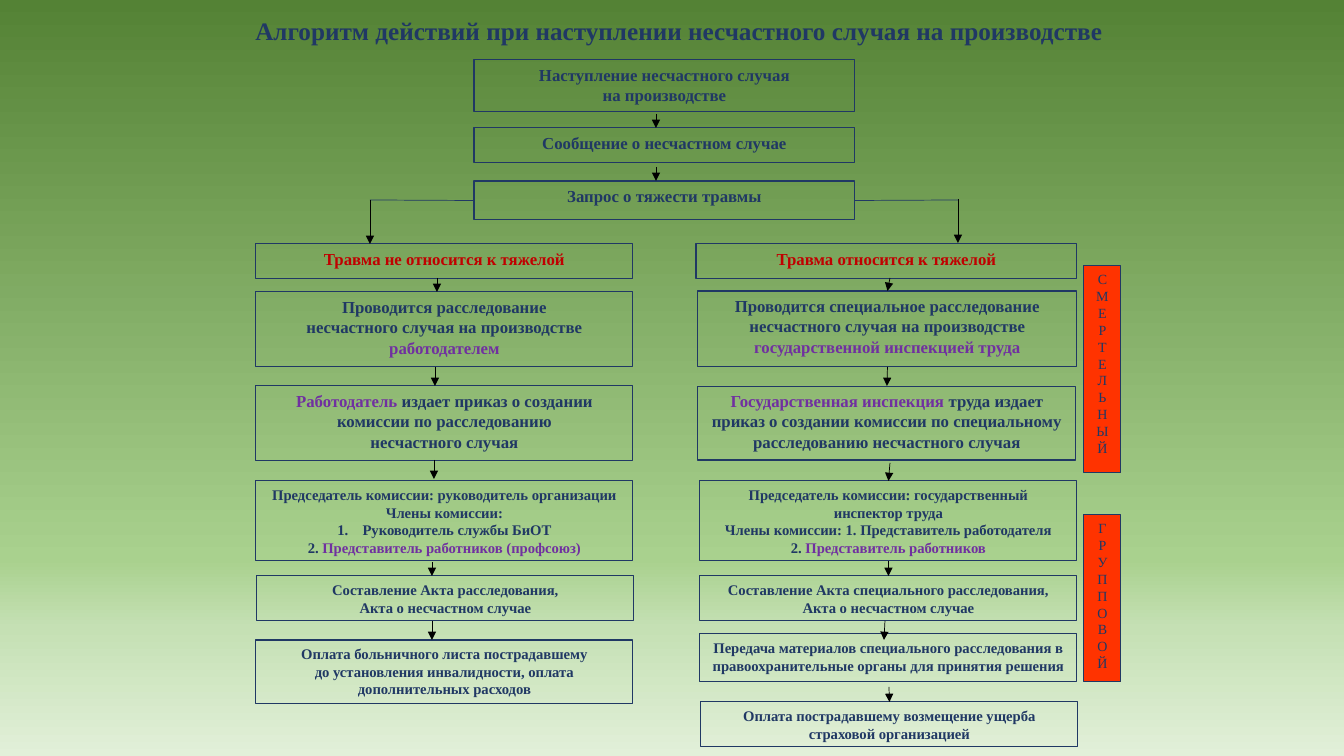
from copy import deepcopy
from lxml import etree
from pptx import Presentation, util as u
from pptx.dml.color import RGBColor
from pptx.enum import shapes, text
from pptx.oxml.ns import qn

PX = 914400 / 100.8
HUES = {"navy": "203864", "red": "C00000", "violet": "7030A0", "flame": "FF3300", "black": "000000"}
RGB = {name: RGBColor.from_string(code) for name, code in HUES.items()}
SKY = [("548235", 0), ("A9D18E", 0.74), ("C5E0B4", 0.83), ("E2F0D9", 1)]


def px(*nums):
    return [u.Emu(round(n * PX)) for n in nums]


def write(frame, words, size, hue="navy", bold=True):
    frame.word_wrap = True
    frame.vertical_anchor = text.MSO_ANCHOR.TOP
    for i, line in enumerate(words.split("|")):
        para = frame.add_paragraph() if i else frame.paragraphs[0]
        para.alignment = text.PP_ALIGN.CENTER
        if line.startswith("#"):
            props = para._p.get_or_add_pPr()
            props.set("marL", "228600")
            props.set("indent", "-228600")
            etree.SubElement(props, qn("a:buFont"), typeface="+mj-lt")
            etree.SubElement(props, qn("a:buAutoNum"), type="arabicPeriod")
        for j, part in enumerate(line.lstrip("#").split("*")):
            if part:
                run = para.add_run()
                run.text = part
                look = {"name": "Times New Roman", "size": u.Pt(size), "bold": bold}
                for key, val in look.items():
                    setattr(run.font, key, val)
                run.font.color.rgb = RGB["violet" if j % 2 else hue]


deck = Presentation()
deck.slide_width, deck.slide_height = px(1344, 756)
slide = deck.slides.add_slide(deck.slide_layouts[6])

fill = slide.background.fill
fill.gradient()
fill.gradient_angle = 270
stops = slide._element.find(".//" + qn("a:gsLst"))
for _ in SKY[2:]:
    stops.append(deepcopy(stops[0]))
for stop, (code, pos) in zip(fill.gradient_stops, SKY):
    stop.color.rgb = RGBColor.from_string(code)
    stop.position = pos

title = slide.shapes.add_textbox(*px(195, 10, 968, 47))
write(title.text_frame, "Алгоритм действий при наступлении несчастного случая на производстве", 18)

BOXES = {
    "event": (474, 60, 381, 52, 12, "Наступление несчастного случая|на производстве"),
    "notice": (474, 128, 381, 35, 12, "Сообщение о несчастном случае"),
    "query": (474, 181, 381, 39, 12, "Запрос о тяжести травмы"),
    "light": (256, 244, 377, 35, 12, "Травма не относится к тяжелой", "red"),
    "probe": (256, 292, 377, 75, 12,
              "Проводится расследование|несчастного случая на производстве *работодателем*"),
    "order": (256, 386, 377, 75, 12,
              "*Работодатель* издает приказ о создании комиссии по расследованию|несчастного случая"),
    "panel": (256, 481, 377, 80, 10.5,
              "Председатель комиссии: руководитель организации|Члены комиссии:|"
              "#Руководитель службы БиОТ|2. *Представитель работников (профсоюз)*"),
    "act": (257, 576, 377, 45, 10.5, "Составление Акта расследования,|Акта о несчастном случае"),
    "pay": (256, 640, 377, 64, 10.5,
            "Оплата больничного листа пострадавшему|"
            "до установления инвалидности, оплата дополнительных расходов"),
    "grave": (696, 244, 381, 35, 12, "Травма относится к тяжелой", "red"),
    "state probe": (698, 291, 379, 76, 12,
                    "Проводится специальное расследование несчастного случая на производстве "
                    "*государственной инспекцией труда*"),
    "state order": (698, 386, 378, 74, 12,
                    "*Государственная инспекция *труда издает приказ о создании комиссии "
                    "по специальному расследованию несчастного случая"),
    "state panel": (700, 481, 377, 80, 10.5,
                    "Председатель комиссии: государственный|инспектор труда|"
                    "Члены комиссии: 1. Представитель работодателя|2. *Представитель работников*"),
    "state act": (700, 576, 377, 45, 10.5,
                  "Составление Акта специального расследования,|Акта о несчастном случае"),
    "police": (700, 634, 377, 48, 10.5,
               "Передача материалов специального расследования в правоохранительные органы "
               "для принятия решения"),
    "claim": (701, 702, 377, 45, 10.5,
              "Оплата пострадавшему возмещение ущерба|страховой организацией"),
    "fatal": (1084, 266, 37, 207, 10, "|".join("СМЕРТЕЛЬНЫЙ"), "navy", False),
    "group": (1084, 515, 37, 167, 10, "|".join("ГРУППОВОЙ"), "navy", False),
}
made = {}
for name, (x, y, w, h, size, words, *style) in BOXES.items():
    box = slide.shapes.add_shape(shapes.MSO_SHAPE.RECTANGLE, *px(x, y, w, h))
    box.shadow.inherit = False
    if name in ("fatal", "group"):
        box.fill.solid()
        box.fill.fore_color.rgb = RGB["flame"]
    else:
        box.fill.background()
    box.line.color.rgb = RGB["navy"]
    box.line.width = u.Pt(0.75)
    write(box.text_frame, words, size, *style)
    made[name] = box

LINKS = [
    (474, 200, 370, 200, ("query", 1), None),
    (855, 200, 958, 200, ("query", 3), None),
    (370, 200, 370, 244, None, None),
    (958, 199, 958, 243, None, None),
    (656, 114, 656, 128, None, None),
    (656, 167, 656, 181, None, None),
    (437, 278, 437, 292, None, None),
    (435, 367, 435, 386, None, None),
    (434, 460, 434, 479, None, None),
    (432, 562, 432, 576, None, None),
    (432, 621, 432, 640, None, None),
    (890, 278, 889, 291, None, ("state probe", 0)),
    (890, 367, 890, 386, ("state probe", 2), ("state order", 0)),
    (890, 463, 890, 481, None, ("state panel", 0)),
    (887, 560, 887, 575, ("state panel", 2), ("state act", 0)),
    (885, 621, 884, 640, None, None),
    (889, 687, 889, 702, None, ("claim", 0)),
]
for x1, y1, x2, y2, start, end in LINKS:
    link = slide.shapes.add_connector(shapes.MSO_CONNECTOR.STRAIGHT, *px(x1, y1, x2, y2))
    if start:
        link.begin_connect(made[start[0]], start[1])
    if end:
        link.end_connect(made[end[0]], end[1])
    flat = y1 == y2
    link.line.color.rgb = RGB["navy" if flat else "black"]
    link.line.width = u.Pt(0.5)
    if not flat:
        etree.SubElement(link.line._get_or_add_ln(), qn("a:tailEnd"), type="triangle")
    etree.SubElement(link._element.spPr, qn("a:effectLst"))

deck.save("out.pptx")
